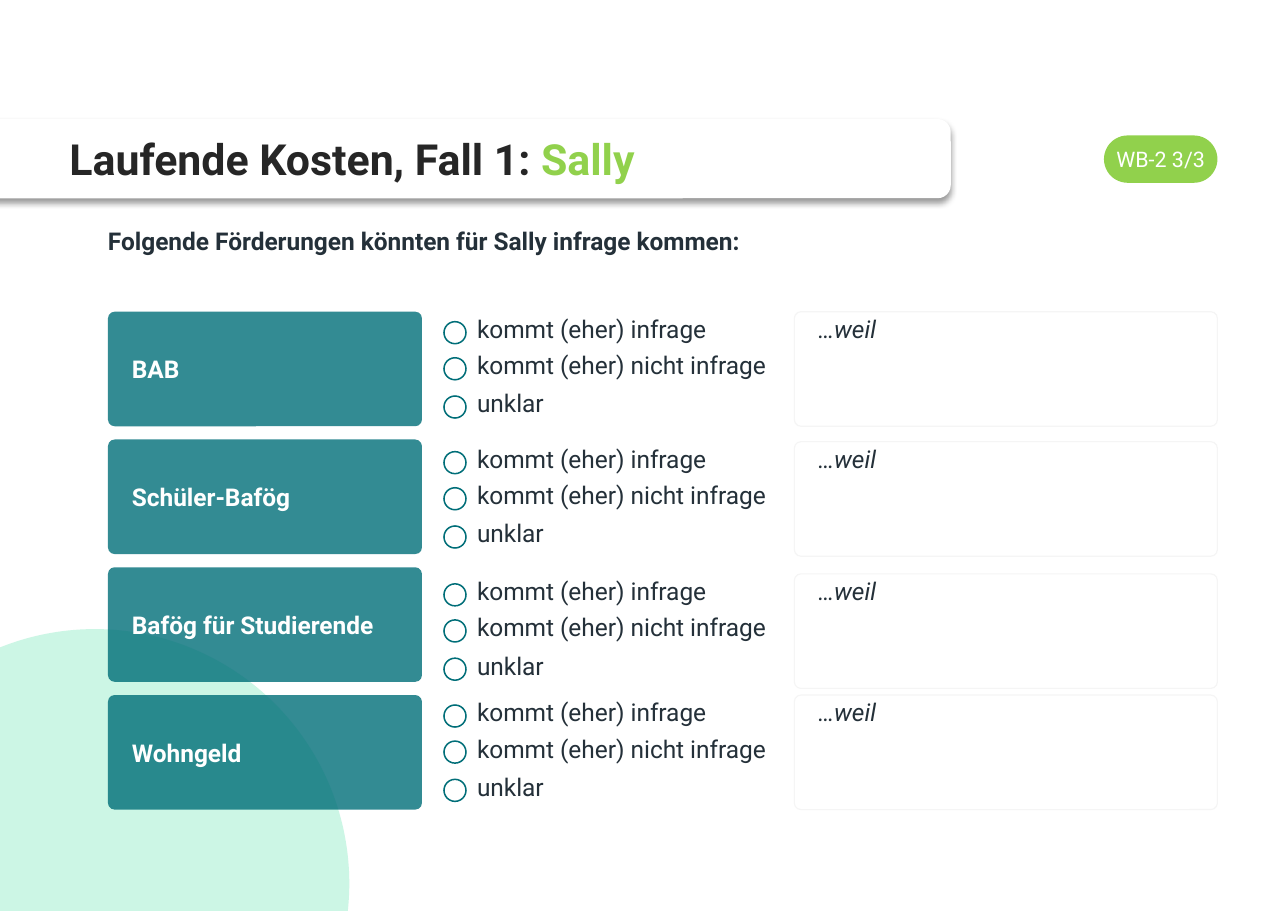
from dataclasses import dataclass
from math import acos, asin, cos, pi, sin

from lxml.etree import SubElement as Sub
from pptx import Presentation
from pptx.dml.color import RGBColor as RGB
from pptx.enum.shapes import MSO_SHAPE as Kind
from pptx.enum.text import MSO_ANCHOR as Anchor, MSO_AUTO_SIZE as Auto, PP_ALIGN as Align
from pptx.oxml.ns import qn
from pptx.util import Pt

HEAD = [("Laufende Kosten, Fall 1: ", "ink"), ("Sally", "lime")]
LEAD = "Folgende Förderungen könnten für Sally infrage kommen:"
PAGE = "WB-2 3/3"
GRANTS = ["BAB", "Schüler-Bafög", "Bafög für Studierende", "Wohngeld"]
CHOICES = ["kommt (eher) infrage", "kommt (eher) nicht infrage", "unklar"]
REASON = "…weil"

WIDE, HIGH = 841.68, 595.44
TOP, PITCH = 203.76, 83.52
BOX_TOPS = [203.76, 288.72, 375.12, 454.32]
STEPS = [1.6, 25.2, 50.2]
ROW = 74.88


@dataclass(frozen=True)
class Theme:
    """Colours, font and type sizes of the slide."""
    ink: str = "262626"
    text: str = "243039"
    teal: str = "006E78"
    lime: str = "91D14C"
    mint: str = "CCF6E5"
    pale: str = "F5F5F5"
    white: str = "FFFFFF"
    font: str = "Roboto"
    title: float = 28
    body: float = 16
    small: float = 14


LOOK = Theme()


def tint(name):
    return RGB.from_string(getattr(LOOK, name))


def paint(shape, fill=None, line=None, width=1):
    shape.shadow.inherit = False
    if fill:
        shape.fill.solid()
        shape.fill.fore_color.rgb = tint(fill)
    else:
        shape.fill.background()
    if line:
        shape.line.color.rgb = tint(line)
        shape.line.width = Pt(width)
    else:
        shape.line.fill.background()
    return shape


def draw(slide, kind, area, round=None, **style):
    shape = slide.shapes.add_shape(kind, *map(Pt, area))
    if round is not None:
        shape.adjustments[0] = round
    return paint(shape, **style)


def write(shape, runs, size=LOOK.body, pad=(0, 0, 0, 0), anchor=Anchor.TOP,
          align=Align.LEFT, bold=False, italic=False):
    frame = shape.text_frame
    frame.word_wrap, frame.auto_size = True, Auto.NONE
    frame.vertical_anchor = anchor
    frame.margin_left, frame.margin_top, frame.margin_right, frame.margin_bottom = map(Pt, pad)
    para = frame.paragraphs[0]
    para.alignment = align
    for words, color in runs:
        run = para.add_run()
        run.text = words
        font = run.font
        font.name, font.size = LOOK.font, Pt(size)
        font.bold, font.italic = bold, italic
        font.color.rgb = tint(color)


def label(slide, words, area, **style):
    write(slide.shapes.add_textbox(*map(Pt, area)), [(words, "text")], **style)


def fade(shape, share):
    color = shape.element.spPr.find(qn("a:solidFill")).find(qn("a:srgbClr"))
    Sub(color, qn("a:alpha")).set("val", str(share * 1000))


def shade(shape):
    effect = shape.element.spPr.find(qn("a:effectLst"))
    outer = Sub(effect, qn("a:outerShdw"), blurRad=str(Pt(4)), dist=str(Pt(3)),
                dir="5400000", algn="t", rotWithShape="0")
    color = Sub(outer, qn("a:srgbClr"), val="000000")
    Sub(color, qn("a:alpha")).set("val", "40000")


def disc(slide, x=62, y=577.5, r=166.3, parts=90):
    start, end = pi + acos(x / r), 2 * pi + asin((HIGH - y) / r)
    turns = [start + (end - start) * i / parts for i in range(parts + 1)]
    arc = [(x + r * cos(t), y + r * sin(t)) for t in turns]
    pen = slide.shapes.build_freeform(0, Pt(HIGH), scale=1.0)
    pen.add_line_segments([(Pt(a), Pt(b)) for a, b in arc], close=True)
    paint(pen.convert_to_shape(), "mint")


def header(slide):
    bar = draw(slide, Kind.ROUNDED_RECTANGLE, (-59.76, 77.76, 681.12, 51.84), 0.167, fill="white")
    shade(bar)
    title = slide.shapes.title
    title.element.addprevious(bar.element)
    title.left, title.top, title.width, title.height = map(Pt, (45.36, 77.76, 568, 51.84))
    write(title, HEAD, LOOK.title, anchor=Anchor.MIDDLE, bold=True)
    label(slide, LEAD, (70.56, 147.6, 750.24, 30.96), bold=True)
    badge = draw(slide, Kind.ROUNDED_RECTANGLE, (721.44, 88.56, 74.16, 30.96), 0.5, fill="lime")
    write(badge, [(PAGE, "white")], LOOK.small, (2.88, 3.6, 2.88, 3.6), Anchor.MIDDLE, Align.CENTER)


def grant(slide, name, top, box):
    pad = (14.4, 0, 8.64, 0)
    card = draw(slide, Kind.ROUNDED_RECTANGLE, (70.56, top, 205.2, ROW), 0.058, fill="teal")
    fade(card, 80)
    write(card, [(name, "white")], pad=pad, anchor=Anchor.MIDDLE, bold=True)
    for words, step in zip(CHOICES, STEPS):
        label(slide, words, (311.76, box + step, 199.44, 23.76))
        draw(slide, Kind.OVAL, (290.16, box + step + 4.9, 14.4, 14.4), line="teal")
    field = draw(slide, Kind.ROUNDED_RECTANGLE, (519.12, box, 276.48, ROW), 0.058,
                 line="pale", width=0.75)
    write(field, [(REASON, "text")], pad=pad, italic=True)


def main():
    """Build the worksheet slide on Sally's running costs."""
    deck = Presentation()
    deck.slide_width, deck.slide_height = Pt(WIDE), Pt(HIGH)
    slide = deck.slides.add_slide(deck.slide_layouts[5])
    disc(slide)
    header(slide)
    for i, (name, box) in enumerate(zip(GRANTS, BOX_TOPS)):
        grant(slide, name, TOP + i * PITCH, box)
    deck.save("out.pptx")


if __name__ == "__main__":
    main()
